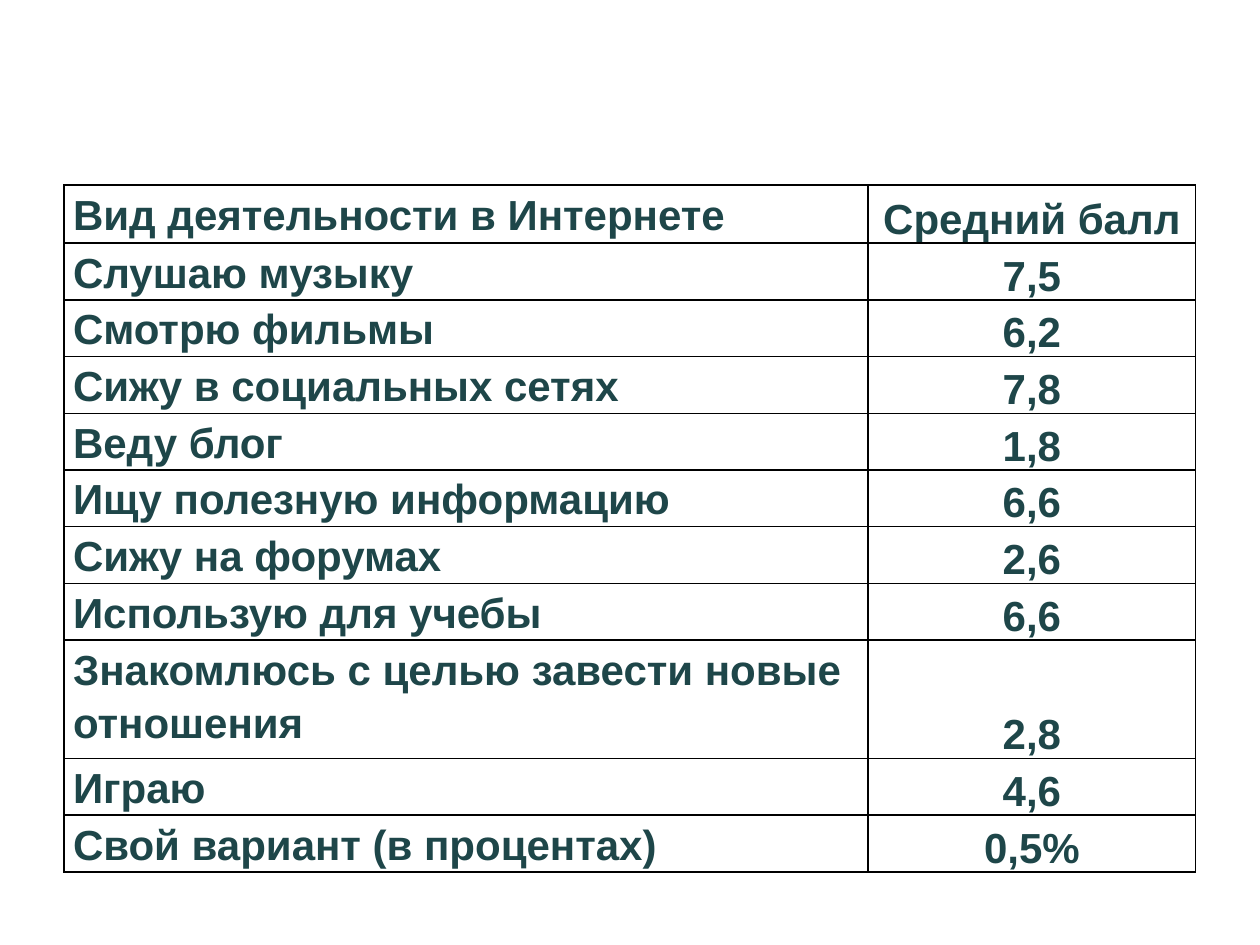
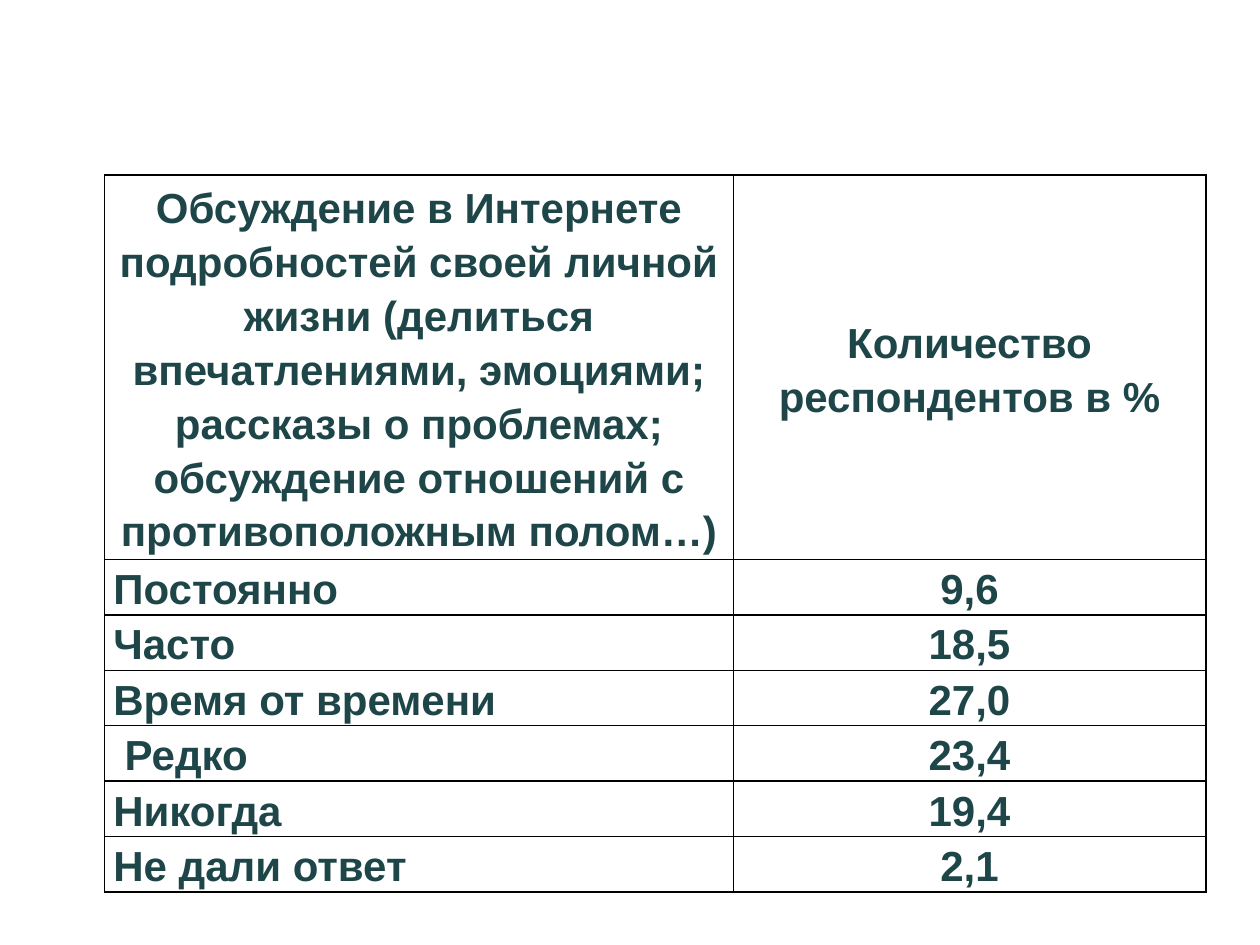
from dataclasses import dataclass

from lxml import etree
from pptx import Presentation
from pptx import util as u
from pptx.dml.color import RGBColor
from pptx.enum import text
from pptx.oxml import ns

ALIGN = text.PP_ALIGN
ANCHOR = text.MSO_ANCHOR


@dataclass(frozen=True)
class Theme:
    """Colours, type and spacing shared by both tables."""
    font: str = "Arial"
    size: float = 24
    ink: str = "1E4649"
    border: str = "000000"
    border_width: float = 1
    line_spacing: float = 1.15
    side_margin: float = 0.07
    indent: float = 0.16


THEME = Theme()

ACTIVITIES = [
    ("Вид деятельности в Интернете", "Средний балл"),
    ("Слушаю музыку", "7,5"),
    ("Смотрю фильмы", "6,2"),
    ("Сижу в социальных сетях", "7,8"),
    ("Веду блог", "1,8"),
    ("Ищу полезную информацию", "6,6"),
    ("Сижу на форумах", "2,6"),
    ("Использую для учебы", "6,6"),
    ("Знакомлюсь с целью завести новые отношения", "2,8"),
    ("Играю", "4,6"),
    ("Свой вариант (в процентах)", "0,5%"),
]

DISCUSSION = [
    ("Обсуждение в Интернете подробностей своей личной жизни (делиться "
     "впечатлениями, эмоциями; рассказы о проблемах; обсуждение отношений "
     "с противоположным полом…)", "Количество респондентов в %"),
    ("Постоянно", "9,6"),
    ("Часто", "18,5"),
    ("Время от времени", "27,0"),
    ("Редко", "23,4"),
    ("Никогда", "19,4"),
    ("Не дали ответ", "2,1"),
]


def draw_borders(cell):
    """Outline all four sides of a cell."""
    properties = cell._tc.get_or_add_tcPr()
    for side in ("a:lnL", "a:lnR", "a:lnT", "a:lnB"):
        line = etree.SubElement(properties, ns.qn(side), w=str(u.Pt(THEME.border_width)))
        fill = etree.SubElement(line, ns.qn("a:solidFill"))
        etree.SubElement(fill, ns.qn("a:srgbClr"), val=THEME.border)


def write(cell, words, align=ALIGN.LEFT, anchor=ANCHOR.TOP):
    """Put formatted text into a cell."""
    cell.margin_left = cell.margin_right = u.Inches(THEME.side_margin)
    cell.margin_top = cell.margin_bottom = 0
    cell.vertical_anchor = anchor
    para = cell.text_frame.paragraphs[0]
    para.alignment = align
    para.line_spacing = THEME.line_spacing
    span = para.add_run()
    span.text = words
    span.font.name = THEME.font
    span.font.size = u.Pt(THEME.size)
    span.font.bold = True
    span.font.color.rgb = RGBColor.from_string(THEME.ink)


def add_grid(deck, rows, left, top, widths, heights, cell_format):
    """Add a page with a ruled table; lengths are inches, cell_format maps row and column to format."""
    page = deck.slides.add_slide(deck.slide_layouts.get_by_name("Blank"))
    frame = page.shapes.add_table(
        len(rows), len(widths), u.Inches(left), u.Inches(top),
        u.Inches(sum(widths)), u.Inches(sum(heights)))
    table = frame.table
    table.first_row = table.horz_banding = False
    for column, width in zip(table.columns, widths):
        column.width = u.Inches(width)
    for row, height in zip(table.rows, heights):
        row.height = u.Inches(height)
    for r, words_in_row in enumerate(rows):
        for c, words in enumerate(words_in_row):
            cell = table.cell(r, c)
            write(cell, words, **cell_format(r, c))
            draw_borders(cell)
            cell.fill.background()
    return table


def activity_format(row, column):
    """Keep names at the top left and scores at the bottom centre."""
    if column == 0:
        return {}
    return {"align": ALIGN.CENTER, "anchor": ANCHOR.BOTTOM}


def discussion_format(row, column):
    """Centre the header and the shares, justify the answers."""
    if row == 0:
        return {"align": ALIGN.CENTER, "anchor": ANCHOR.MIDDLE}
    return {"align": ALIGN.CENTER if column else ALIGN.JUSTIFY}


def main():
    """Build both table pages and save the deck."""
    deck = Presentation()
    deck.slide_width, deck.slide_height = u.Inches(10), u.Inches(7.5)

    activity_heights = [0.46] + [0.45] * 7 + [0.94] + [0.45] * 2
    add_grid(deck, ACTIVITIES, 0.51, 1.47, (6.38, 2.6), activity_heights, activity_format)

    discussion_heights = [3.05] + [0.44] * 6
    answers = add_grid(deck, DISCUSSION, 0.83, 1.39, (4.99, 3.75),
                       discussion_heights, discussion_format)
    answers.cell(4, 0).margin_left = u.Inches(THEME.indent)

    deck.save("out.pptx")


if __name__ == "__main__":
    main()
